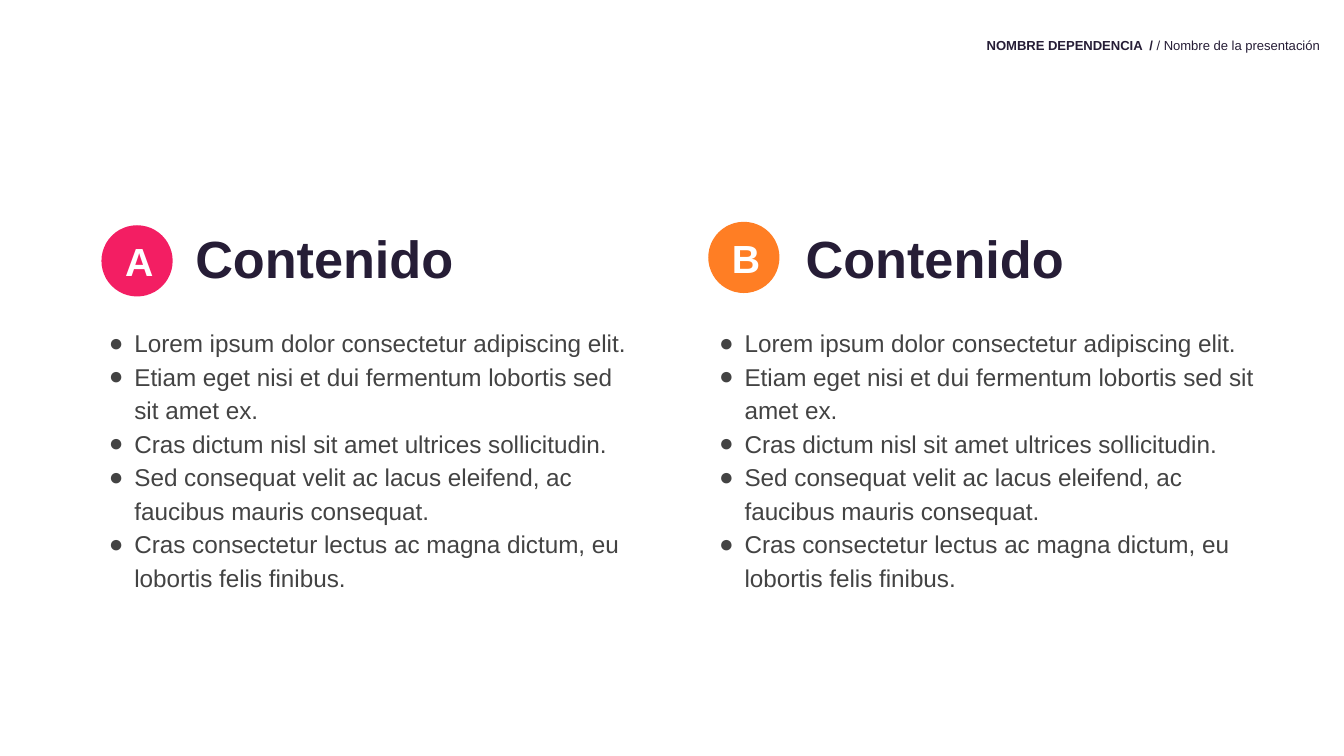
from lxml.etree import SubElement
from pptx import Presentation
from pptx.dml.color import RGBColor
from pptx.enum.shapes import MSO_SHAPE as Shape
from pptx.enum.text import MSO_ANCHOR as Anchor, MSO_AUTO_SIZE as AutoSize, PP_ALIGN as Align
from pptx.oxml.ns import qn
from pptx.util import Inches, Pt

INK, GREY, WHITE = "261D36", "434343", "FFFFFF"
COMPARISON_LAYOUT = 4
ITEMS = [
    "Lorem ipsum dolor consectetur adipiscing elit.",
    "Etiam eget nisi et dui fermentum lobortis sed sit amet ex.",
    "Cras dictum nisl sit amet ultrices sollicitudin.",
    "Sed consequat velit ac lacus eleifend, ac faucibus mauris consequat.",
    "Cras consectetur lectus ac magna dictum, eu lobortis felis finibus.",
]


def color(hex_code):
    return RGBColor.from_string(hex_code)


class SlideBuilder:
    """Holds the style and the current page; places are percentages of the page size."""

    font_name = "Arial"
    inset = Inches(0.1)

    def __init__(self, deck):
        self.deck = deck
        self.page = deck.slides.add_slide(deck.slide_layouts[COMPARISON_LAYOUT])
        self.page.background.fill.solid()
        self.page.background.fill.fore_color.rgb = color(WHITE)
        title = self.page.shapes.title
        title.element.getparent().remove(title.element)

    def area(self, left, top, width, height):
        across, down = self.deck.slide_width / 100, self.deck.slide_height / 100
        return [round(size) for size in (left * across, top * down, width * across, height * down)]

    def move(self, box, place):
        box.left, box.top, box.width, box.height = self.area(*place)

    def frame(self, box, anchor=Anchor.TOP):
        frame = box.text_frame
        frame.word_wrap = True
        frame.auto_size = AutoSize.NONE
        frame.vertical_anchor = anchor
        frame.margin_left = frame.margin_right = self.inset
        frame.margin_top = frame.margin_bottom = self.inset
        return frame

    def style(self, para, size, hex_code, bold=None, align=Align.LEFT):
        para.alignment = align
        para.space_before = Pt(0)
        para.font.name = self.font_name
        para.font.size = Pt(size)
        para.font.color.rgb = color(hex_code)
        para.font.bold = bold

    def heading(self, slot, place, text):
        box = self.page.placeholders[slot]
        self.move(box, place)
        para = self.frame(box).paragraphs[0]
        para.text = text
        self.style(para, 28, INK, bold=True)

    def bullet(self, para):
        props = para._p.get_or_add_pPr()
        props.set("marL", str(Inches(0.2)))
        props.set("indent", str(Inches(-0.19)))
        SubElement(SubElement(props, qn("a:buClr")), qn("a:srgbClr"), val=GREY)
        SubElement(props, qn("a:buFont"), typeface=self.font_name)
        SubElement(props, qn("a:buChar"), char="●")

    def bullet_list(self, slot, place, items):
        box = self.page.placeholders[slot]
        self.move(box, place)
        frame = self.frame(box)
        for index, item in enumerate(items):
            para = frame.add_paragraph() if index else frame.paragraphs[0]
            para.text = item
            para.line_spacing = 1.15
            self.bullet(para)
            self.style(para, 13, GREY)

    def badge(self, place, letter, fill):
        circle = self.page.shapes.add_shape(Shape.OVAL, *self.area(*place))
        circle.shadow.inherit = False
        circle.fill.solid()
        circle.fill.fore_color.rgb = color(fill)
        circle.line.fill.background()
        para = self.frame(circle, Anchor.MIDDLE).paragraphs[0]
        para.text = letter
        self.style(para, 21, WHITE, bold=True, align=Align.CENTER)

    def running_header(self, place, department, name):
        box = self.page.shapes.add_textbox(*self.area(*place))
        frame = self.frame(box)
        frame.margin_right = Inches(0.18)
        para = frame.paragraphs[0]
        for text, bold in ((department, True), (name, False)):
            span = para.add_run()
            span.text = text
            span.font.bold = bold
        self.style(para, 7, INK, align=Align.RIGHT)


def main():
    deck = Presentation()
    deck.slide_width = Inches(10)
    deck.slide_height = deck.slide_width * 9 // 16
    slide = SlideBuilder(deck)

    # letter, fill, badge left and top, heading left, list left and width
    panels = [
        ("A", "F31E63", 7.55, 29.8, 13.53, 7, 41.2),
        ("B", "FF7E24", 52.7, 29.35, 58.95, 52.4, 42),
    ]
    for index, panel in enumerate(panels):
        letter, fill, badge_left, badge_top, heading_left, list_left, list_width = panel
        slot = 1 + 2 * index
        slide.heading(slot, (heading_left, 28.2, 28.9, 11.7), "Contenido")
        slide.bullet_list(slot + 1, (list_left, 41.1, list_width, 40.7), ITEMS)
        slide.badge((badge_left, badge_top, 5.3, 9.42), letter, fill)

    slide.running_header((66.5, 3.2, 33.5, 5.7), "NOMBRE DEPENDENCIA  / ", "/ Nombre de la presentación")
    deck.save("out.pptx")


if __name__ == "__main__":
    main()
